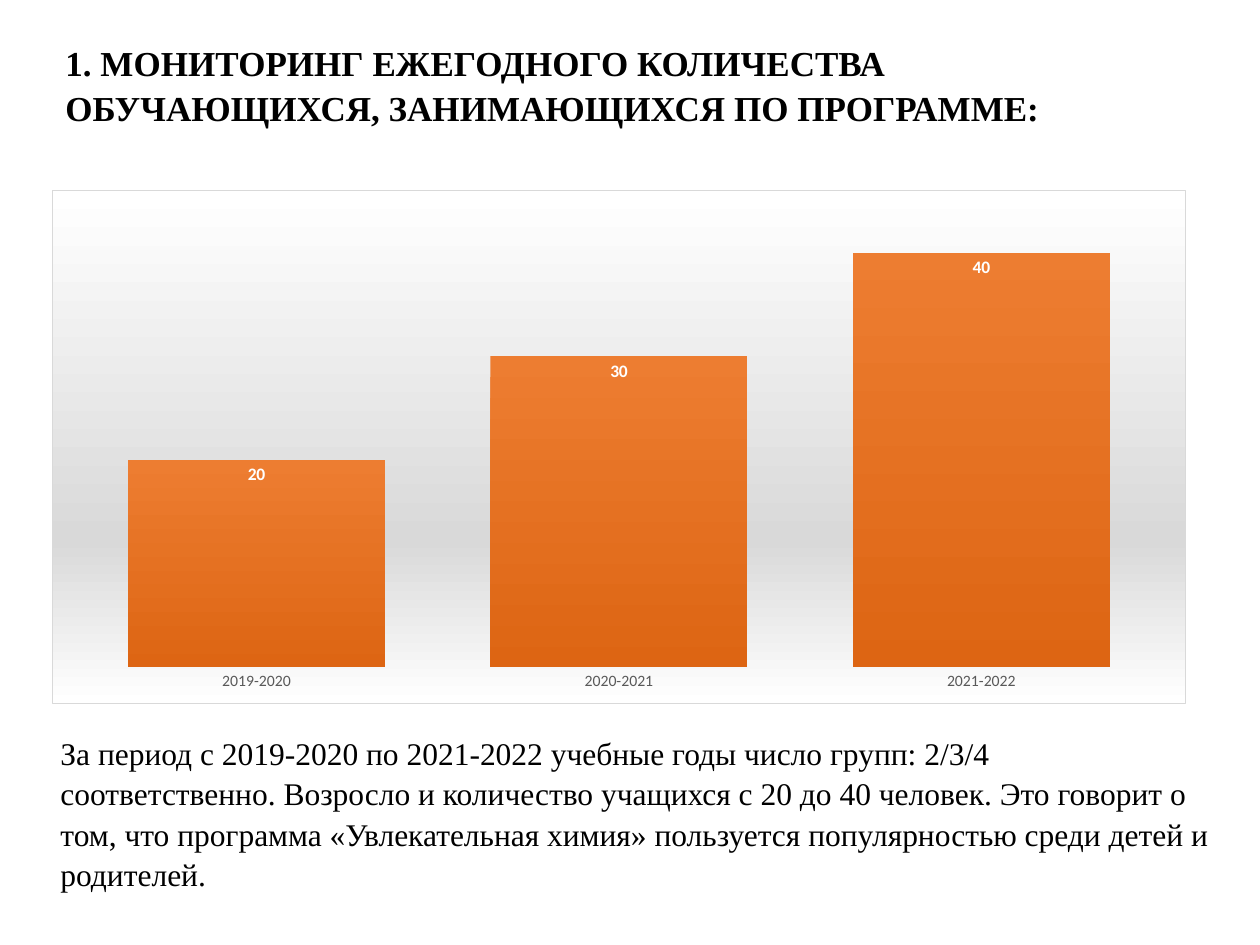
from lxml import etree
from pptx import Presentation
from pptx import util as u
from pptx.chart.data import CategoryChartData
from pptx.dml.color import RGBColor
from pptx.enum import chart as ch, shapes, text
from pptx.oxml import parse_xml
from pptx.oxml.ns import nsdecls, qn

WHITE = RGBColor(0xFF, 0xFF, 0xFF)
BLACK = RGBColor(0, 0, 0)
SILVER = RGBColor(0xD9, 0xD9, 0xD9)
GRAY = RGBColor(0x59, 0x59, 0x59)
ORANGE = RGBColor(0xED, 0x7D, 0x31)
DARK_ORANGE = RGBColor(0xDD, 0x65, 0x13)

TITLE = "1. МОНИТОРИНГ ЕЖЕГОДНОГО КОЛИЧЕСТВА ОБУЧАЮЩИХСЯ, ЗАНИМАЮЩИХСЯ ПО ПРОГРАММЕ:"
SUMMARY = (
    "За период с 2019-2020 по 2021-2022 учебные годы число групп: 2/3/4 "
    "соответственно. Возросло и количество учащихся с 20 до 40 человек. "
    "Это говорит о том, что программа «Увлекательная химия» пользуется "
    "популярностью среди детей и родителей."
)


def px(*lengths):
    return [u.Emu(round(n * 914400 / 126)) for n in lengths]


def gradient(*stops):
    gs = "".join(
        f'<a:gs pos="{pos * 1000}"><a:srgbClr val="{color}"/></a:gs>'
        for pos, color in stops
    )
    return parse_xml(
        f'<a:gradFill {nsdecls("a")} rotWithShape="1"><a:gsLst>{gs}</a:gsLst>'
        '<a:lin ang="5400000" scaled="0"/></a:gradFill>'
    )


prs = Presentation()
prs.slide_width, prs.slide_height = px(1260, 945)
s = prs.slides.add_slide(prs.slide_layouts[6])

title = s.shapes.add_shape(shapes.MSO_SHAPE.RECTANGLE, *px(53, 32, 1166, 103))
title.shadow.inherit = False
title.fill.solid()
title.fill.fore_color.rgb = WHITE
title.line.fill.background()

data = CategoryChartData()
data.categories = ["2019-2020", "2020-2021", "2021-2022"]
data.add_series("Series 1", (20, 30, 40))
chart = s.shapes.add_chart(
    ch.XL_CHART_TYPE.COLUMN_CLUSTERED, *px(52, 190, 1134, 514), data
).chart
chart.has_legend = False
chart.has_title = False
chart.font.size = u.Pt(10)
chart.font.name = "Calibri"
chart.font.color.rgb = BLACK

space = chart._chartSpace
sp_pr = etree.SubElement(space, qn("c:spPr"))
space.find(qn("c:txPr")).addprevious(sp_pr)
sp_pr.append(gradient((0, WHITE), (68, SILVER), (100, WHITE)))
sp_pr.append(parse_xml(
    f'<a:ln {nsdecls("a")} w="9525"><a:solidFill>'
    f'<a:srgbClr val="{SILVER}"/></a:solidFill></a:ln>'
))

area = space.find(".//" + qn("c:plotArea"))
for old in area.findall(qn("c:layout")):
    area.remove(old)
layout = etree.Element(qn("c:layout"))
manual = etree.SubElement(layout, qn("c:manualLayout"))
for tag, val in (
    ("layoutTarget", "inner"), ("xMode", "edge"), ("yMode", "edge"),
    ("x", "0.02"), ("y", "0.02"), ("w", "0.96"), ("h", "0.91"),
):
    etree.SubElement(manual, qn("c:" + tag)).set("val", val)
area.insert(0, layout)

axis = chart.category_axis
axis.major_tick_mark = ch.XL_TICK_MARK.NONE
axis.format.line.fill.background()
axis.tick_labels.font.size = u.Pt(9)
axis.tick_labels.font.name = "Calibri"
axis.tick_labels.font.color.rgb = GRAY
axis = chart.value_axis
axis.minimum_scale, axis.maximum_scale = 0, 45
axis.has_major_gridlines = False
axis.visible = False

plot = chart.plots[0]
plot.gap_width = 41
plot.vary_by_categories = False
series = plot.series[0]
series._element.get_or_add_spPr().append(gradient((0, ORANGE), (100, DARK_ORANGE)))
labels = series.data_labels
labels.show_value = True
labels.position = ch.XL_LABEL_POSITION.INSIDE_END
labels.font.size = u.Pt(10)
labels.font.bold = True
labels.font.name = "Calibri"
labels.font.color.rgb = WHITE

summary = s.shapes.add_textbox(*px(48, 725, 1176, 176))

for sp, words, size, bold in ((title, TITLE, 20, True), (summary, SUMMARY, 18, False)):
    tf = sp.text_frame
    tf.word_wrap = True
    tf.auto_size = text.MSO_AUTO_SIZE.SHAPE_TO_FIT_TEXT
    tf.vertical_anchor = text.MSO_ANCHOR.TOP
    tf.text = words
    p = tf.paragraphs[0]
    p.alignment = text.PP_ALIGN.LEFT
    p.line_spacing = 1.07
    p.space_after = u.Pt(8)
    r = p.runs[0]
    r.font.size = u.Pt(size)
    r.font.bold = bold
    r.font.name = "Times New Roman"
    r.font.color.rgb = BLACK

prs.save("out.pptx")
